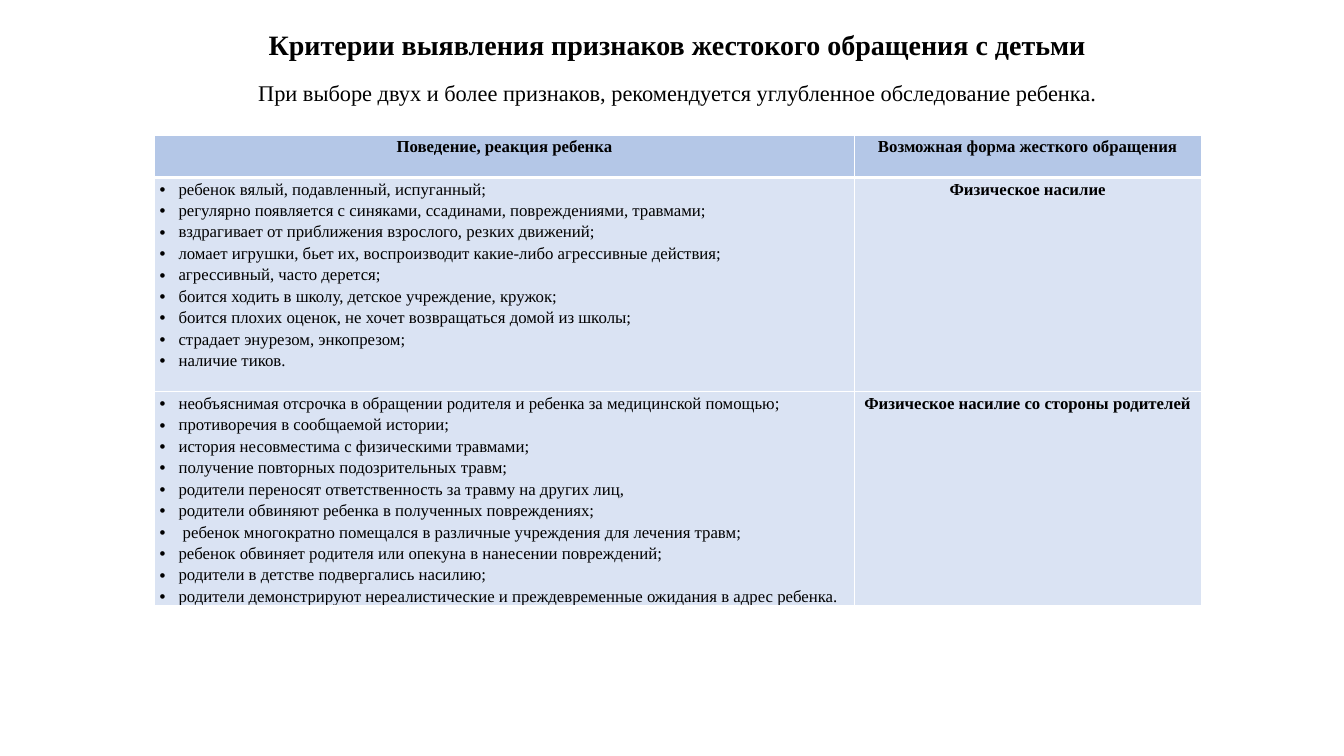
import pptx
import pptx.dml.color
import pptx.enum.text
import pptx.oxml
import pptx.oxml.ns
import pptx.util
from pptx.util import Cm

BLACK = pptx.dml.color.RGBColor(0x00, 0x00, 0x00)
WHITE = pptx.dml.color.RGBColor(0xFF, 0xFF, 0xFF)
HEADER_BLUE = pptx.dml.color.RGBColor(0xB4, 0xC7, 0xE7)
BODY_BLUE = pptx.dml.color.RGBColor(0xDA, 0xE3, 0xF3)
CENTER = pptx.enum.text.PP_ALIGN.CENTER
LEFT = pptx.enum.text.PP_ALIGN.LEFT

TITLE = "Критерии выявления признаков жестокого обращения с детьми"
SUBTITLE = ("При выборе двух и более признаков, рекомендуется углубленное "
            "обследование ребенка.")
HEADERS = ["Поведение, реакция ребенка", "Возможная форма жесткого обращения"]
CRITERIA = [
    ([
        "ребенок вялый, подавленный, испуганный;",
        "регулярно появляется с синяками, ссадинами, повреждениями, травмами;",
        "вздрагивает от приближения взрослого, резких движений;",
        "ломает игрушки, бьет их, воспроизводит какие-либо агрессивные действия;",
        "агрессивный, часто дерется;",
        "боится ходить в школу, детское учреждение, кружок;",
        "боится плохих оценок, не хочет возвращаться домой из школы;",
        "страдает энурезом, энкопрезом;",
        "наличие тиков.",
    ], "Физическое насилие"),
    ([
        "необъяснимая отсрочка в обращении родителя и ребенка за медицинской помощью;",
        "противоречия в сообщаемой истории;",
        "история несовместима с физическими травмами;",
        "получение повторных подозрительных травм;",
        "родители переносят ответственность за травму на других лиц,",
        "родители обвиняют ребенка в полученных повреждениях;",
        " ребенок многократно помещался в различные учреждения для лечения травм;",
        "ребенок обвиняет родителя или опекуна в нанесении повреждений;",
        "родители в детстве подвергались насилию;",
        "родители демонстрируют нереалистические и преждевременные ожидания в адрес ребенка.",
    ], "Физическое насилие со стороны родителей"),
]


class SlideBuilder:
    font_name = "Times New Roman"
    table_size = 12
    line_spacing = 1.15
    bullet_indent = Cm(0.48)
    thin_line, thick_line = 1, 3

    def __init__(self, presentation):
        self.slide = presentation.slides.add_slide(presentation.slide_layouts[5])

    def format_paragraph(self, paragraph, size, bold, alignment):
        paragraph.alignment = alignment
        paragraph.font.name = self.font_name
        paragraph.font.size = pptx.util.Pt(size)
        paragraph.font.bold = bold
        paragraph.font.color.rgb = BLACK

    def add_title(self, title, subtitle, left, top, width, height):
        shape = self.slide.shapes.title
        shape.left, shape.top, shape.width, shape.height = left, top, width, height
        frame = shape.text_frame
        frame.word_wrap = False
        frame.auto_size = pptx.enum.text.MSO_AUTO_SIZE.NONE
        frame.vertical_anchor = pptx.enum.text.MSO_ANCHOR.MIDDLE
        heading = frame.paragraphs[0]
        heading.text = title
        self.format_paragraph(heading, 20, True, CENTER)
        note = frame.add_paragraph()
        note.text = subtitle
        note.space_before = pptx.util.Pt(13)
        self.format_paragraph(note, 16, False, CENTER)

    def add_bullet(self, paragraph):
        properties = paragraph._p.get_or_add_pPr()
        properties.set("marL", str(self.bullet_indent))
        properties.set("indent", str(-self.bullet_indent))
        namespace = pptx.oxml.ns.nsdecls("a")
        for element in ('buFont {} typeface="Arial"', 'buChar {} char="•"'):
            properties.append(pptx.oxml.parse_xml(f"<a:{element.format(namespace)}/>"))

    def add_borders(self, cell, row):
        """Draw white borders, with a thick line under the header row."""
        top = self.thick_line if row == 1 else self.thin_line
        bottom = self.thick_line if row == 0 else self.thin_line
        widths = {"lnL": self.thin_line, "lnR": self.thin_line, "lnT": top, "lnB": bottom}
        for side, width in widths.items():
            cell._tc.get_or_add_tcPr().append(pptx.oxml.parse_xml(
                f'<a:{side} {pptx.oxml.ns.nsdecls("a")} w="{pptx.util.Pt(width)}">'
                f'<a:solidFill><a:srgbClr val="{WHITE}"/></a:solidFill></a:{side}>'))

    def fill_cell(self, cell, row, lines, color, bulleted=False):
        cell.margin_left = cell.margin_right = Cm(0.12)
        cell.margin_top = cell.margin_bottom = 0
        self.add_borders(cell, row)
        cell.fill.solid()
        cell.fill.fore_color.rgb = color
        cell.text = "\n".join(lines)
        for paragraph in cell.text_frame.paragraphs:
            paragraph.line_spacing = self.line_spacing
            if bulleted:
                self.add_bullet(paragraph)
            self.format_paragraph(paragraph, self.table_size, not bulleted,
                                  LEFT if bulleted else CENTER)

    def add_criteria_table(self, headers, criteria, left, top, column_widths, row_heights):
        table = self.slide.shapes.add_table(
            len(row_heights), len(column_widths), left, top,
            sum(column_widths), sum(row_heights)).table
        for column, width in zip(table.columns, column_widths):
            column.width = width
        for row, height in zip(table.rows, row_heights):
            row.height = height
        for column, header in enumerate(headers):
            self.fill_cell(table.cell(0, column), 0, [header], HEADER_BLUE)
        for row, (signs, abuse_form) in enumerate(criteria, start=1):
            self.fill_cell(table.cell(row, 0), row, signs, BODY_BLUE, bulleted=True)
            self.fill_cell(table.cell(row, 1), row, [abuse_form], BODY_BLUE)


def main():
    presentation = pptx.Presentation()
    presentation.slide_width, presentation.slide_height = Cm(33.87), Cm(19.05)
    builder = SlideBuilder(presentation)
    builder.add_title(TITLE, SUBTITLE, Cm(6.12), Cm(0.56), Cm(21.9), Cm(2.26))
    builder.add_criteria_table(HEADERS, CRITERIA, Cm(3.9), Cm(3.4),
                               [Cm(17.63), Cm(8.74)], [Cm(1.07), Cm(5.4), Cm(5.4)])
    presentation.save("out.pptx")


if __name__ == "__main__":
    main()
